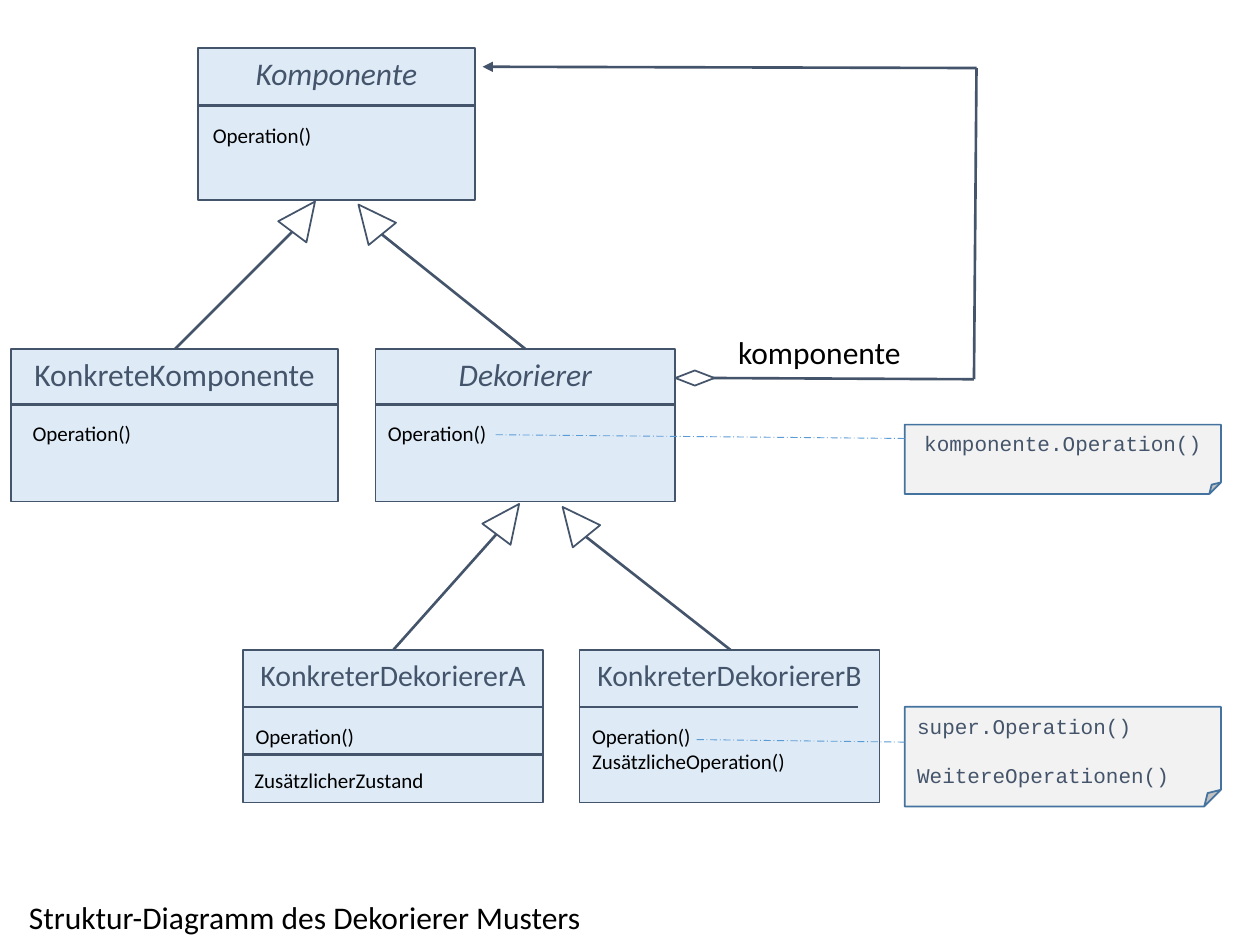
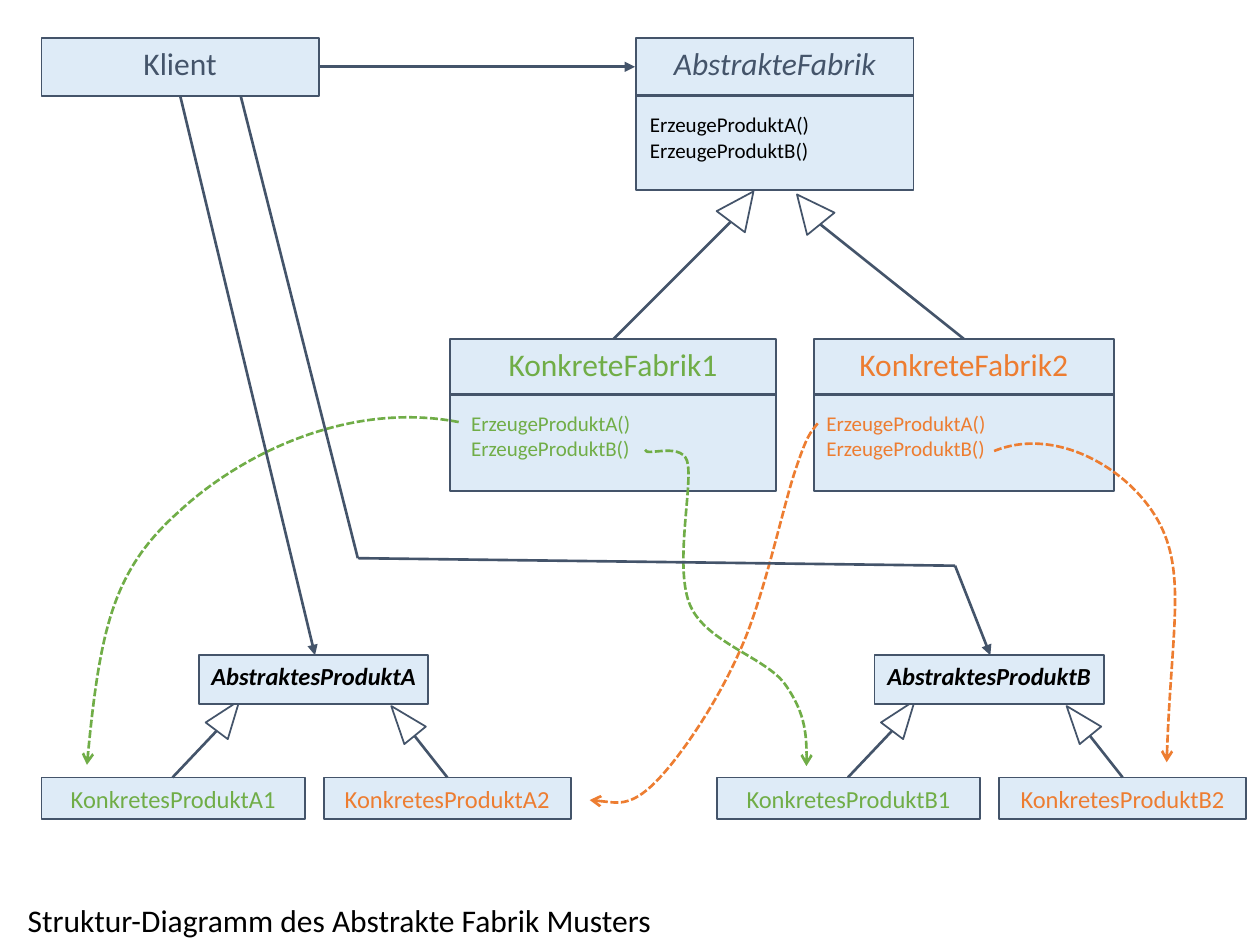
from lxml import etree
from pptx import Presentation
from pptx import util as u
from pptx.dml.color import RGBColor
from pptx.enum import dml, shapes, text
from pptx.oxml.ns import qn

SLATE = "44546A"
PALE_BLUE = "DEEBF7"
BLACK = "000000"
GREEN = "70AD47"
ORANGE = "ED7D31"
NOTE_FILL = "F2F2F2"
NOTE_LINE = "43739E"
NOTE_LINK = "5B9BD5"
BODY_FONT = "Calibri"
CODE_FONT = "Courier New"
LEFT, CENTER = text.PP_ALIGN.LEFT, text.PP_ALIGN.CENTER


def color(hex_code):
    return RGBColor.from_string(hex_code)


def inches(*lengths):
    return [u.Inches(length) for length in lengths]


def write(frame, words, size, ink=BLACK, font=BODY_FONT, align=LEFT,
          bold=False, italic=False, wrap=False):
    frame.text = words
    frame.word_wrap = wrap
    frame.vertical_anchor = text.MSO_ANCHOR.TOP
    for para in frame.paragraphs:
        para.alignment = align
        for span in para.runs:
            span.font.name = font
            span.font.size = u.Pt(size)
            span.font.color.rgb = color(ink)
            span.font.bold = bold
            span.font.italic = italic


def label(page, box, words, size=12, ink=BLACK):
    area = page.shapes.add_textbox(*inches(*box))
    write(area.text_frame, words, size, ink)


def outline(shape, fill=None, line=SLATE, width=1):
    shape.shadow.inherit = False
    if fill:
        shape.fill.solid()
        shape.fill.fore_color.rgb = color(fill)
    else:
        shape.fill.background()
    shape.line.color.rgb = color(line)
    shape.line.width = u.Pt(width)


def draw(page, kind, box, fill=None, line=SLATE):
    shape = page.shapes.add_shape(kind, *inches(*box))
    outline(shape, fill, line)
    return shape


def add_arrowhead(shape, end, kind):
    stroke = shape.line._get_or_add_ln()
    etree.SubElement(stroke, qn(f"a:{end}End")).set("type", kind)


def connect(page, start, end, ink=SLATE, width=1.5, dash=None, arrow=False):
    link = page.shapes.add_connector(
        shapes.MSO_CONNECTOR.STRAIGHT, *inches(*start, *end))
    link.line.color.rgb = color(ink)
    link.line.width = u.Pt(width)
    if dash:
        link.line.dash_style = dash
    if arrow:
        add_arrowhead(link, "tail", "triangle")
    etree.SubElement(link._element.spPr, qn("a:effectLst"))


def curve(page, points, ink):
    start, *rest = [inches(*point) for point in points]
    builder = page.shapes.build_freeform(*start)
    builder.add_line_segments(rest, close=False)
    shape = builder.convert_to_shape()
    steps = list(shape._element.iter(qn("a:lnTo")))
    for first in range(0, len(steps), 3):
        trio = steps[first:first + 3]
        bezier = etree.Element(qn("a:cubicBezTo"))
        trio[0].addprevious(bezier)
        for step in trio:
            bezier.append(step[0])
            step.getparent().remove(step)
    outline(shape, line=ink, width=1.5)
    shape.line.dash_style = dml.MSO_LINE.SQUARE_DOT
    add_arrowhead(shape, "tail", "arrow")


def name_box(page, box, name, size=18, ink=SLATE, bold=False, italic=False):
    shape = draw(page, shapes.MSO_SHAPE.RECTANGLE, box, PALE_BLUE)
    write(shape.text_frame, name, size, ink, align=CENTER, bold=bold, italic=italic)


def class_box(page, box, name, members, member_size, header=0.44, indent=0,
              size=18, ink=SLATE, member_ink=BLACK, italic=False, rule_width=None):
    left, top, width, _ = box
    name_box(page, box, name, size, ink, italic=italic)
    rule = top + header
    connect(page, (left, rule), (left + (rule_width or width), rule))
    label(page, (left + indent, rule + 0.08, *member_size), members, ink=member_ink)


def inheritance(page, start, end, side, head_width=0.28):
    connect(page, start, end)
    center_x, center_y = end[0] + side * 0.09, end[1] - 0.12
    head_height = 0.3
    head = draw(page, shapes.MSO_SHAPE.ISOSCELES_TRIANGLE,
                (center_x - head_width / 2, center_y - head_height / 2,
                 head_width, head_height))
    head.rotation = 36.9 if side > 0 else 320.9


def inheritance_pair(page, left_start, left_end, right_start, right_end, head_width=0.28):
    inheritance(page, left_start, left_end, 1, head_width)
    inheritance(page, right_start, right_end, -1, head_width)


def code_note(page, box, code, link_from, link_drop, align=LEFT):
    left, top, _, _ = box
    note = draw(page, shapes.MSO_SHAPE.FOLDED_CORNER, box, NOTE_FILL, NOTE_LINE)
    write(note.text_frame, code, 12, SLATE, CODE_FONT, align)
    for para in note.text_frame.paragraphs[1:]:
        para.space_before = u.Pt(14)
    connect(page, (left, top + link_drop), link_from, NOTE_LINK, 0.5,
            dml.MSO_LINE.LONG_DASH_DOT)


def component_reference(page, left, top):
    draw(page, shapes.MSO_SHAPE.DIAMOND, (left, top - 0.06, 0.31, 0.12))
    label(page, (left + 0.4, top - 0.41, 1.51, 0.4), "komponente", 18)
    corner, upper = (left + 2.37, top + 0.01), (left + 2.39, top - 2.46)
    connect(page, (left + 0.3, top), corner)
    connect(page, corner, upper)
    connect(page, upper, (left - 1.53, top - 2.47), arrow=True)


def product_family(page, left, letter):
    children = [(0, 2.09, GREEN), (2.24, 1.96, ORANGE)]
    for number, (offset, width, ink) in enumerate(children, 1):
        name_box(page, (left + offset, 6.17, width, 0.33),
                 f"KonkretesProdukt{letter}{number}", 14, ink)
    inheritance_pair(page, (left + 1.04, 6.17), (left + 1.39, 5.8),
                     (left + 3.22, 6.17), (left + 2.96, 5.84), 0.22)
    name_box(page, (left + 1.25, 5.2, 1.82, 0.39), f"AbstraktesProdukt{letter}",
             14, BLACK, bold=True, italic=True)


def client_links(page):
    connect(page, (2.54, 0.53), (5.04, 0.53), arrow=True)
    connect(page, (1.43, 0.76), (2.5, 5.2), arrow=True)
    route = [(1.91, 0.76), (2.84, 4.43), (7.58, 4.49), (7.86, 5.2)]
    for start, end in zip(route, route[1:]):
        connect(page, start, end, arrow=end == route[-1])


def titled_page(deck, title, box):
    page = deck.slides.add_slide(deck.slide_layouts[5])
    caption = page.shapes.title
    caption.left, caption.top, caption.width, caption.height = inches(*box)
    write(caption.text_frame, title, 18, wrap=True)
    caption.text_frame.auto_size = text.MSO_AUTO_SIZE.NONE
    return page


def decorator_page(deck):
    page = titled_page(deck, "Struktur-Diagramm des Dekorierer Musters",
                       (0.13, 7.08, 4.63, 0.4))
    one_line = (0.99, 0.3)
    class_box(page, (1.57, 0.38, 2.2, 1.21), "Komponente", "Operation()", one_line,
              header=0.46, indent=0.02, italic=True)
    class_box(page, (0.09, 2.77, 2.59, 1.21), "KonkreteKomponente", "Operation()",
              one_line, indent=0.07)
    class_box(page, (2.98, 2.77, 2.38, 1.21), "Dekorierer", "Operation()", one_line,
              italic=True)
    class_box(page, (1.93, 5.16, 2.38, 1.21), "KonkreterDekoriererA", "Operation()",
              one_line, header=0.45, size=17)
    connect(page, (1.93, 5.99), (4.31, 5.99))
    label(page, (1.92, 6.04, 1.56, 0.3), "ZusätzlicherZustand")
    class_box(page, (4.6, 5.16, 2.38, 1.21), "KonkreterDekoriererB",
              "Operation()\nZusätzlicheOperation()", (1.75, 0.5),
              header=0.45, size=17, rule_width=2.21)
    inheritance_pair(page, (1.39, 2.77), (2.32, 1.84), (4.17, 2.77), (3.03, 1.86))
    inheritance_pair(page, (3.12, 5.16), (3.94, 4.24), (5.8, 5.16), (4.65, 4.26))
    component_reference(page, 5.36, 3)
    code_note(page, (7.18, 3.37, 2.51, 0.55), "komponente.Operation()",
              (3.92, 3.45), 0.11, CENTER)
    code_note(page, (7.18, 5.61, 2.51, 0.79),
              "super.Operation()\nWeitereOperationen()", (5.52, 5.87), 0.28)


def factory_page(deck):
    page = titled_page(deck, "Struktur-Diagramm des Abstrakte Fabrik Musters",
                       (0.12, 7.1, 5.77, 0.4))
    members, two_lines = "ErzeugeProduktA()\nErzeugeProduktB()", (1.48, 0.5)
    name_box(page, (0.33, 0.3, 2.2, 0.46), "Klient")
    class_box(page, (5.05, 0.3, 2.2, 1.21), "AbstrakteFabrik", members, two_lines,
              header=0.46, indent=0.01, italic=True)
    class_box(page, (3.57, 2.69, 2.59, 1.21), "KonkreteFabrik1", members, two_lines,
              indent=0.07, ink=GREEN, member_ink=GREEN)
    class_box(page, (6.46, 2.69, 2.38, 1.21), "KonkreteFabrik2", members, two_lines,
              ink=ORANGE, member_ink=ORANGE)
    inheritance_pair(page, (4.87, 2.69), (5.8, 1.76), (7.65, 2.69), (6.51, 1.78))
    product_family(page, 0.33, "A")
    product_family(page, 5.69, "B")
    curve(page, [(6.49, 3.36), (6.43, 3.44), (6.41, 3.44), (6.31, 3.74),
                 (6.21, 4.04), (6.06, 4.76), (5.87, 5.17),
                 (5.69, 5.58), (5.4, 6.01), (5.2, 6.21),
                 (5, 6.41), (4.82, 6.36), (4.68, 6.35)], ORANGE)
    curve(page, [(7.89, 3.58), (8.38, 3.38), (8.96, 3.72), (9.19, 4.13),
                 (9.42, 4.54), (9.29, 5.03), (9.26, 6.05)], ORANGE)
    curve(page, [(3.64, 3.35), (2.76, 3.18), (1.9, 3.61), (1.41, 4.07),
                 (0.91, 4.52), (0.79, 4.99), (0.69, 6.07)], GREEN)
    curve(page, [(5.12, 3.57), (5.12, 3.63), (5.44, 3.49), (5.46, 3.69),
                 (5.49, 3.9), (5.35, 4.52), (5.48, 4.81),
                 (5.61, 5.1), (6.08, 5.22), (6.23, 5.43),
                 (6.38, 5.64), (6.41, 5.86), (6.4, 6.08)], GREEN)
    client_links(page)


def main():
    deck = Presentation()
    deck.slide_width, deck.slide_height = inches(10, 7.5)
    decorator_page(deck)
    factory_page(deck)
    deck.save("out.pptx")


if __name__ == "__main__":
    main()
